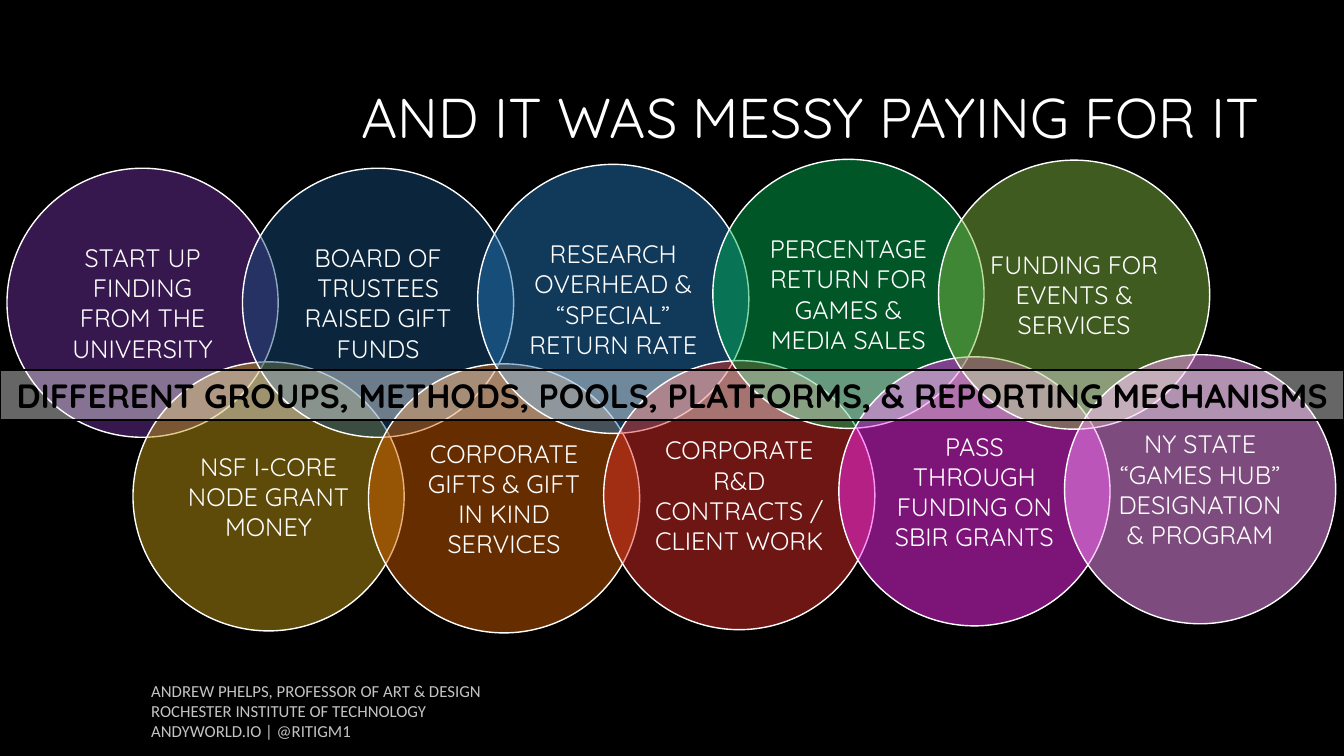
"""Build the slide of overlapping funding-source circles."""
from typing import NamedTuple

from lxml import etree
from pptx import Presentation
from pptx.dml.color import RGBColor
from pptx.enum.shapes import MSO_SHAPE as SHAPE
from pptx.enum.text import MSO_ANCHOR as ANCHOR, PP_ALIGN as ALIGN
from pptx.oxml.ns import qn
from pptx.shapes.autoshape import Shape
from pptx.slide import Slide
from pptx.util import Pt

BLACK = RGBColor(0x00, 0x00, 0x00)
WHITE = RGBColor(0xFF, 0xFF, 0xFF)
GREY = RGBColor(0xC4, 0xC4, 0xC4)
PURPLE = RGBColor(0x70, 0x30, 0xA0)
GOLD = RGBColor(0xC1, 0x99, 0x15)
NAVY = RGBColor(0x18, 0x4F, 0x7B)
ORANGE = RGBColor(0xD1, 0x5E, 0x01)
BLUE = RGBColor(0x24, 0x76, 0xB9)
RED = RGBColor(0xDF, 0x2E, 0x28)
GREEN = RGBColor(0x00, 0xB0, 0x50)
MAGENTA = RGBColor(0xFF, 0x2C, 0xF8)
LIME = RGBColor(0x81, 0xBB, 0x42)
PINK = RGBColor(0xFF, 0x99, 0xFF)

HEADING_FONT = "Quicksand"
FOOTER_FONT = "Calibri"
SLIDE_W, SLIDE_H = 960, 540
CIRCLE_W, CIRCLE_H = 193.7, 192.2
LOWER_ROW_SHIFT = 90


class Box(NamedTuple):
    """Position and size in points."""
    left: float
    top: float
    width: float
    height: float


class Source(NamedTuple):
    """A funding source shown as a circle."""
    text: str
    top: float
    color: RGBColor


class Pair(NamedTuple):
    """An upper circle and the lower one shifted to its right."""
    left: float
    upper: Source
    lower: Source


PAIRS = [
    Pair(5, Source("START UP FINDING FROM THE UNIVERSITY", 120.2, PURPLE),
         Source("NSF I-CORE NODE GRANT MONEY", 258.5, GOLD)),
    Pair(173.2, Source("BOARD OF TRUSTEES RAISED GIFT FUNDS", 120.2, NAVY),
         Source("CORPORATE GIFTS & GIFT IN KIND SERVICES", 259.9, ORANGE)),
    Pair(341.2, Source("RESEARCH OVERHEAD & “SPECIAL” RETURN RATE", 117.4, BLUE),
         Source("CORPORATE R&D CONTRACTS / CLIENT WORK", 257.6, RED)),
    Pair(509.2, Source("PERCENTAGE RETURN FOR GAMES & MEDIA SALES", 113.8, GREEN),
         Source("PASS THROUGH FUNDING ON SBIR GRANTS", 254.9, MAGENTA)),
    Pair(670.4, Source("FUNDING FOR EVENTS & SERVICES", 114.4, LIME),
         Source("NY STATE “GAMES HUB” DESIGNATION & PROGRAM", 253.4, PINK)),
]
FOOTER = [
    "ANDREW PHELPS, PROFESSOR OF ART & DESIGN",
    "ROCHESTER INSTITUTE OF TECHNOLOGY",
    "ANDYWORLD.IO | @RITIGM1",
]


def write(shape: Shape, lines: list[str], font: str, size: float, color: RGBColor,
          align: ALIGN, bold: bool = False) -> None:
    """Fill a shape with evenly styled paragraphs."""
    tf = shape.text_frame
    tf.word_wrap = True
    for i, line in enumerate(lines):
        p = tf.add_paragraph() if i else tf.paragraphs[0]
        p.text = line
        p.alignment = align
        p.font.name = font
        p.font.size = Pt(size)
        p.font.bold = bold
        p.font.color.rgb = color


def add_text(s: Slide, box: Box) -> Shape:
    """Add an empty text box."""
    return s.shapes.add_textbox(*map(Pt, box))


def add_glass(s: Slide, kind: SHAPE, box: Box, fill: RGBColor, opacity: int,
              line: RGBColor) -> Shape:
    """Add a translucent outlined shape, its opacity in percent."""
    sp = s.shapes.add_shape(kind, *map(Pt, box))
    sp.shadow.inherit = False
    sp.fill.solid()
    sp.fill.fore_color.rgb = fill
    color = sp.fill._xPr.find(qn("a:solidFill"))[0]
    etree.SubElement(color, qn("a:alpha")).set("val", str(opacity * 1000))
    sp.line.color.rgb = line
    sp.line.width = Pt(1)
    sp.text_frame.vertical_anchor = ANCHOR.MIDDLE
    return sp


def add_circle(s: Slide, source: Source, left: float) -> None:
    """Draw one funding source."""
    box = Box(left, source.top, CIRCLE_W, CIRCLE_H)
    sp = add_glass(s, SHAPE.OVAL, box, source.color, 49, WHITE)
    write(sp, [source.text], HEADING_FONT, 18, WHITE, ALIGN.CENTER)


def main() -> None:
    """Build and save the slide."""
    prs = Presentation()
    prs.slide_width, prs.slide_height = Pt(SLIDE_W), Pt(SLIDE_H)
    s = prs.slides.add_slide(prs.slide_layouts[6])
    s.background.fill.solid()
    s.background.fill.fore_color.rgb = BLACK

    footer = add_text(s, Box(108, 486, 522, 36))
    tf = footer.text_frame
    tf.margin_left = tf.margin_top = tf.margin_right = tf.margin_bottom = 0
    write(footer, FOOTER, FOOTER_FONT, 12, GREY, ALIGN.LEFT)

    title = add_text(s, Box(228.2, 60.5, 678.2, 101.5))
    write(title, ["AND IT WAS MESSY PAYING FOR IT"], HEADING_FONT, 40, WHITE, ALIGN.RIGHT)
    title.text_frame.paragraphs[0].line_spacing = 0.9

    for pair in PAIRS:
        add_circle(s, pair.upper, pair.left)
        add_circle(s, pair.lower, pair.left + LOWER_ROW_SHIFT)

    banner = add_glass(s, SHAPE.RECTANGLE, Box(0, 264.2, SLIDE_W, 36), WHITE, 40, BLACK)
    write(banner, ["DIFFERENT GROUPS, METHODS, POOLS, PLATFORMS, & REPORTING MECHANISMS"],
          HEADING_FONT, 24, BLACK, ALIGN.CENTER, bold=True)

    prs.save("out.pptx")


if __name__ == "__main__":
    main()
